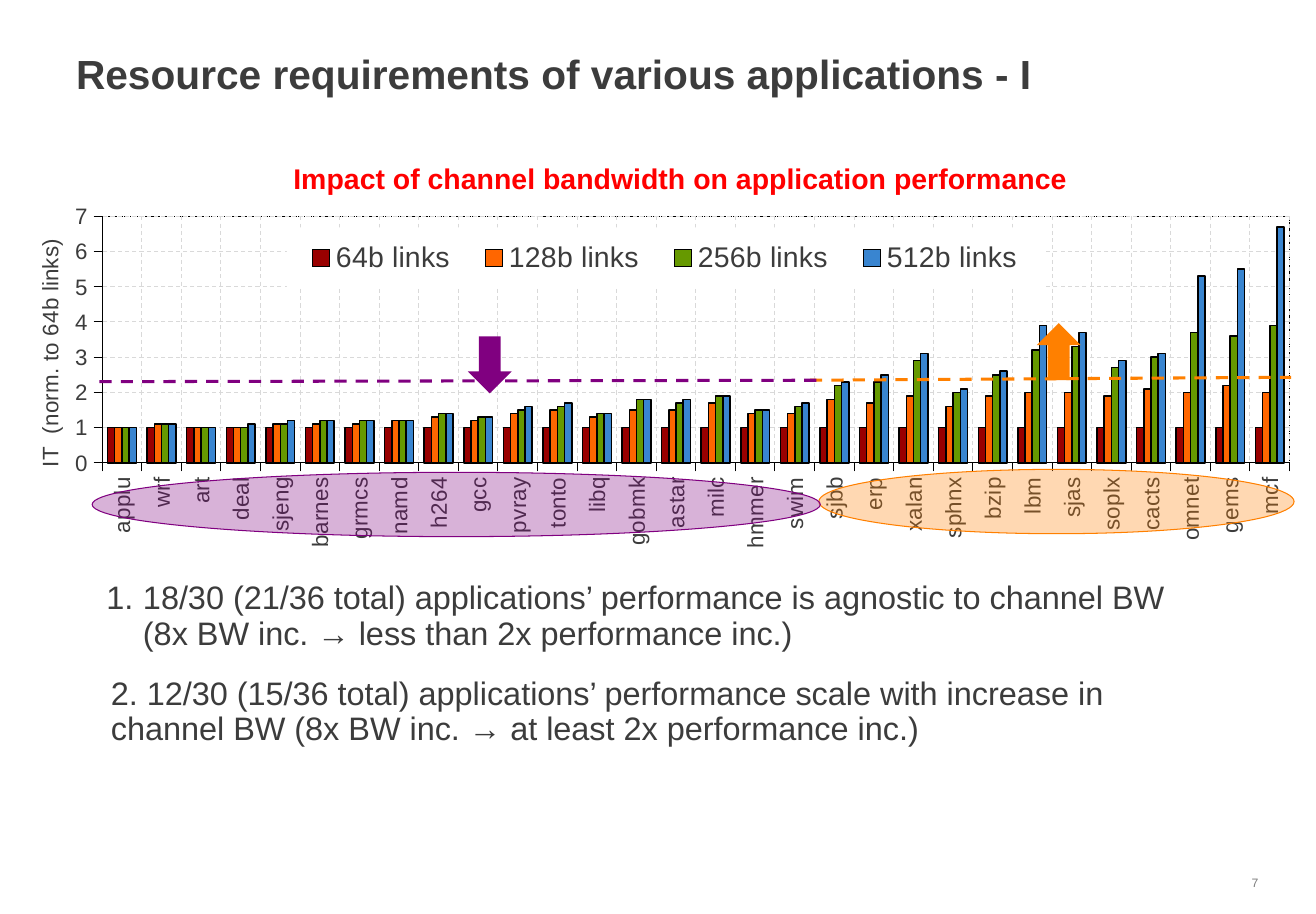
import lxml.etree
import pptx
import pptx.chart.data
import pptx.dml.color
import pptx.enum.chart
import pptx.enum.dml
import pptx.enum.shapes
import pptx.enum.text
import pptx.oxml
import pptx.oxml.ns
import pptx.util

Inches = pptx.util.Inches
Pt = pptx.util.Pt
DASH = pptx.enum.dml.MSO_LINE
SHAPE = pptx.enum.shapes.MSO_SHAPE

COLORS = {
    "text": "3C3C3C", "number": "7D7D7D", "heading": "FF0000",
    "agnostic": "800080", "scaling": "FF8000",
    "grid": "D9D9D9", "axis": "000000", "white": "FFFFFF",
    "64b": "990000", "128b": "FF6600", "256b": "669900", "512b": "3985D0",
}

APPLICATIONS = (
    "applu wrf art deal sjeng barnes grmcs namd h264 gcc pvray tonto libq gobmk astar "
    "milc hmmer swim sjbb erp xalan sphnx bzip lbm sjas soplx cacts omnet gems mcf"
).split()
PERFORMANCE = {
    "64b": [1] * len(APPLICATIONS),
    "128b": [1, 1.1, 1, 1, 1.1, 1.1, 1.1, 1.2, 1.3, 1.2, 1.4, 1.5, 1.3, 1.5, 1.5,
             1.7, 1.4, 1.4, 1.8, 1.7, 1.9, 1.6, 1.9, 2, 2, 1.9, 2.1, 2, 2.2, 2],
    "256b": [1, 1.1, 1, 1, 1.1, 1.2, 1.2, 1.2, 1.4, 1.3, 1.5, 1.6, 1.4, 1.8, 1.7,
             1.9, 1.5, 1.6, 2.2, 2.3, 2.9, 2, 2.5, 3.2, 3.3, 2.7, 3, 3.7, 3.6, 3.9],
    "512b": [1, 1.1, 1, 1.1, 1.2, 1.2, 1.2, 1.2, 1.4, 1.3, 1.6, 1.7, 1.4, 1.8, 1.8,
             1.9, 1.5, 1.7, 2.3, 2.5, 3.1, 2.1, 2.6, 3.9, 3.7, 2.9, 3.1, 5.3, 5.5, 6.7],
}


def rgb(name):
    return pptx.dml.color.RGBColor.from_string(COLORS[name])


def format_line(line, color, width, dash=None):
    line.color.rgb = rgb(color)
    line.width = Pt(width)
    if dash:
        line.dash_style = dash


def chart_xml(content):
    return pptx.oxml.parse_xml(
        content.replace(">", " %s>" % pptx.oxml.ns.nsdecls("c", "a"), 1))


def manual_layout(*fractions, inner=False):
    """Return a c:layout element from x, y and, if given, width and height."""
    target = '<c:layoutTarget val="inner"/>' if inner else ""
    places = "".join('<c:%s val="%s"/>' % pair for pair in zip("xywh", fractions))
    return chart_xml(
        "<c:layout><c:manualLayout>" + target + '<c:xMode val="edge"/><c:yMode val="edge"/>'
        + places + "</c:manualLayout></c:layout>")


class SlideBuilder:
    font = "Arial"

    def __init__(self, presentation):
        self.slide = presentation.slides.add_slide(presentation.slide_layouts[5])

    def set_font(self, font, size, color="text", bold=False):
        font.name = self.font
        font.size = Pt(size)
        font.bold = bold
        font.color.rgb = rgb(color)

    def fill_text(self, shape, text, size, color="text", bold=False,
                  spacing=0.9, centered=False, margins=(0.1, 0.05)):
        frame = shape.text_frame
        frame.word_wrap = True
        frame.auto_size = pptx.enum.text.MSO_AUTO_SIZE.NONE
        frame.vertical_anchor = pptx.enum.text.MSO_ANCHOR.TOP
        frame.margin_left = frame.margin_right = Inches(margins[0])
        frame.margin_top = frame.margin_bottom = Inches(margins[1])
        paragraph = frame.paragraphs[0]
        align = pptx.enum.text.PP_ALIGN
        paragraph.alignment = align.CENTER if centered else align.LEFT
        paragraph.line_spacing = spacing
        run = paragraph.add_run()
        run.text = text
        self.set_font(run.font, size, color, bold)
        return paragraph

    def title(self, text, left, top, width, height):
        title = self.slide.shapes.title
        title.left, title.top = Inches(left), Inches(top)
        title.width, title.height = Inches(width), Inches(height)
        self.fill_text(title, text, 20, bold=True, margins=(0.07, 0.04))

    def text(self, text, left, top, width, height, size, numbered=False, **style):
        box = self.slide.shapes.add_textbox(
            Inches(left), Inches(top), Inches(width), Inches(height))
        paragraph = self.fill_text(box, text, size, **style)
        if numbered:
            properties = paragraph._p.get_or_add_pPr()
            properties.set("marL", str(Inches(0.25)))
            properties.set("indent", str(-Inches(0.25)))
            bullet = lxml.etree.SubElement(properties, pptx.oxml.ns.qn("a:buAutoNum"))
            bullet.set("type", "arabicPeriod")

    def shape(self, kind, left, top, width, height, color, alpha=None, rotation=0):
        shape = self.slide.shapes.add_shape(
            kind, Inches(left), Inches(top), Inches(width), Inches(height))
        shape.shadow.inherit = False
        shape.rotation = rotation
        shape.fill.solid()
        shape.fill.fore_color.rgb = rgb(color)
        if alpha is None:
            shape.line.fill.background()
        else:
            fill_color = shape.element.xpath("./p:spPr/a:solidFill/a:srgbClr")[0]
            opacity = lxml.etree.SubElement(fill_color, pptx.oxml.ns.qn("a:alpha"))
            opacity.set("val", str(alpha * 1000))
            format_line(shape.line, color, 0.5)

    def dashed_line(self, x1, y1, x2, y2, color):
        connector = self.slide.shapes.add_connector(
            pptx.enum.shapes.MSO_CONNECTOR.STRAIGHT,
            Inches(x1), Inches(y1), Inches(x2), Inches(y2))
        format_line(connector.line, color, 1.5, DASH.DASH)
        properties = connector.element.xpath("./p:spPr")[0]
        lxml.etree.SubElement(properties, pptx.oxml.ns.qn("a:effectLst"))

    def column_chart(self, left, top, width, height):
        data = pptx.chart.data.CategoryChartData()
        data.categories = APPLICATIONS
        for name, values in PERFORMANCE.items():
            data.add_series(name + " links", values)
        chart = self.slide.shapes.add_chart(
            pptx.enum.chart.XL_CHART_TYPE.COLUMN_CLUSTERED,
            Inches(left), Inches(top), Inches(width), Inches(height), data).chart
        chart.has_title = False
        self.set_font(chart.font, 11)

        plot = chart.plots[0]
        plot.gap_width = 150
        plot.overlap = 0
        plot.vary_by_categories = False
        for series, name in zip(plot.series, PERFORMANCE):
            series.invert_if_negative = False
            series.format.fill.solid()
            series.format.fill.fore_color.rgb = rgb(name)
            format_line(series.format.line, "axis", 0.75)

        for axis in (chart.category_axis, chart.value_axis):
            axis.major_tick_mark = pptx.enum.chart.XL_TICK_MARK.OUTSIDE
            axis.has_major_gridlines = True
            format_line(axis.major_gridlines.format.line, "grid", 0.5, DASH.DASH)
            format_line(axis.format.line, "axis", 0.5)
            self.set_font(axis.tick_labels.font, 11)
        value_axis = chart.value_axis
        value_axis.minimum_scale, value_axis.maximum_scale = 0, 7
        value_axis.major_unit = 1
        run = value_axis.axis_title.text_frame.paragraphs[0].add_run()
        run.text = "IT  (norm. to 64b links)"
        self.set_font(run.font, 11)
        for body in chart.element.xpath(".//c:catAx/c:txPr/a:bodyPr | .//c:valAx/c:title//a:bodyPr"):
            body.set("rot", "-5400000")
            body.set("vert", "horz")

        chart.has_legend = True
        chart.legend.position = pptx.enum.chart.XL_LEGEND_POSITION.RIGHT
        chart.legend.include_in_layout = False
        self.set_font(chart.legend.font, 14)
        self.place_chart_parts(chart)

    def place_chart_parts(self, chart):
        """Fix the plot area, axis title and legend, and style their frames."""
        plot_area = chart.element.xpath(".//c:plotArea")[0]
        axis_title = plot_area.xpath("./c:valAx/c:title")[0]
        legend = chart.element.xpath(".//c:legend")[0]
        for part in (plot_area, axis_title, legend):
            for layout in part.xpath("./c:layout"):
                part.remove(layout)
        plot_area.insert(0, manual_layout(0.066, 0.049, 0.926, 0.691, inner=True))
        plot_area.append(chart_xml(
            '<c:spPr><a:noFill/><a:ln w="6350"><a:solidFill><a:srgbClr val="%s"/></a:solidFill>'
            '<a:prstDash val="sysDashDot"/></a:ln></c:spPr>' % COLORS["axis"]))
        axis_title.xpath("./c:tx")[0].addnext(manual_layout(0.01, 0.1))
        legend.xpath("./c:legendPos")[0].addnext(manual_layout(0.21, 0.08, 0.59, 0.17))
        legend.xpath("./c:overlay")[0].addnext(chart_xml(
            '<c:spPr><a:solidFill><a:srgbClr val="%s"/></a:solidFill>'
            "<a:ln><a:noFill/></a:ln></c:spPr>" % COLORS["white"]))


def main():
    presentation = pptx.Presentation()
    presentation.slide_width, presentation.slide_height = Inches(9), Inches(6.25)
    builder = SlideBuilder(presentation)
    builder.title("Resource requirements of various applications - I", 0.45, 0.33, 8.1, 0.43)
    builder.text("7", 8.49, 5.95, 0.3, 0.17, 6, color="number", spacing=0.95,
                 margins=(0.07, 0.04))
    builder.text("Impact of channel bandwidth on application performance",
                 1.87, 1.08, 5.57, 0.32, 14, color="heading", bold=True, centered=True)
    builder.column_chart(0.12, 1.36, 8.77, 2.44)
    builder.text("18/30 (21/36 total) applications’ performance is agnostic to channel BW "
                 "(8x BW inc. → less than 2x performance inc.)",
                 0.63, 3.93, 7.67, 0.59, 16, numbered=True)
    builder.shape(SHAPE.OVAL, 5.6, 3.21, 3.25, 0.44, "scaling", alpha=30)
    builder.text("2. 12/30 (15/36 total) applications’ performance scale with increase in "
                 "channel BW (8x BW inc. → at least 2x performance inc.)",
                 0.66, 4.58, 7.82, 0.59, 16)
    builder.dashed_line(5.54, 2.6, 8.83, 2.58, "scaling")
    builder.shape(SHAPE.DOWN_ARROW, 7.09, 2.21, 0.3, 0.39, "scaling", rotation=180)
    builder.dashed_line(0.68, 2.61, 5.59, 2.6, "agnostic")
    builder.shape(SHAPE.DOWN_ARROW, 3.2, 2.3, 0.3, 0.39, "agnostic")
    builder.shape(SHAPE.OVAL, 0.63, 3.23, 4.98, 0.44, "agnostic", alpha=30)
    presentation.save("out.pptx")


if __name__ == "__main__":
    main()
